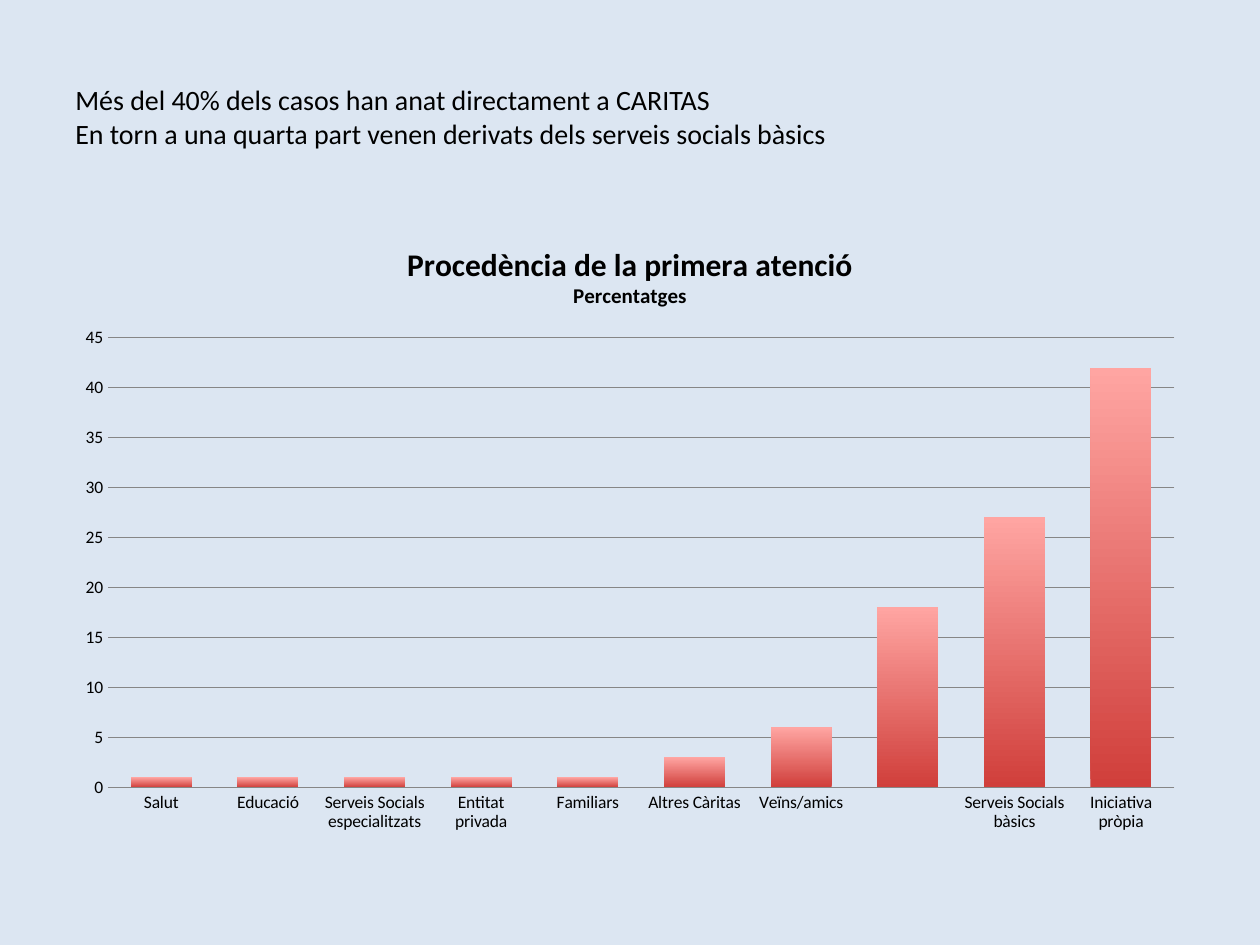
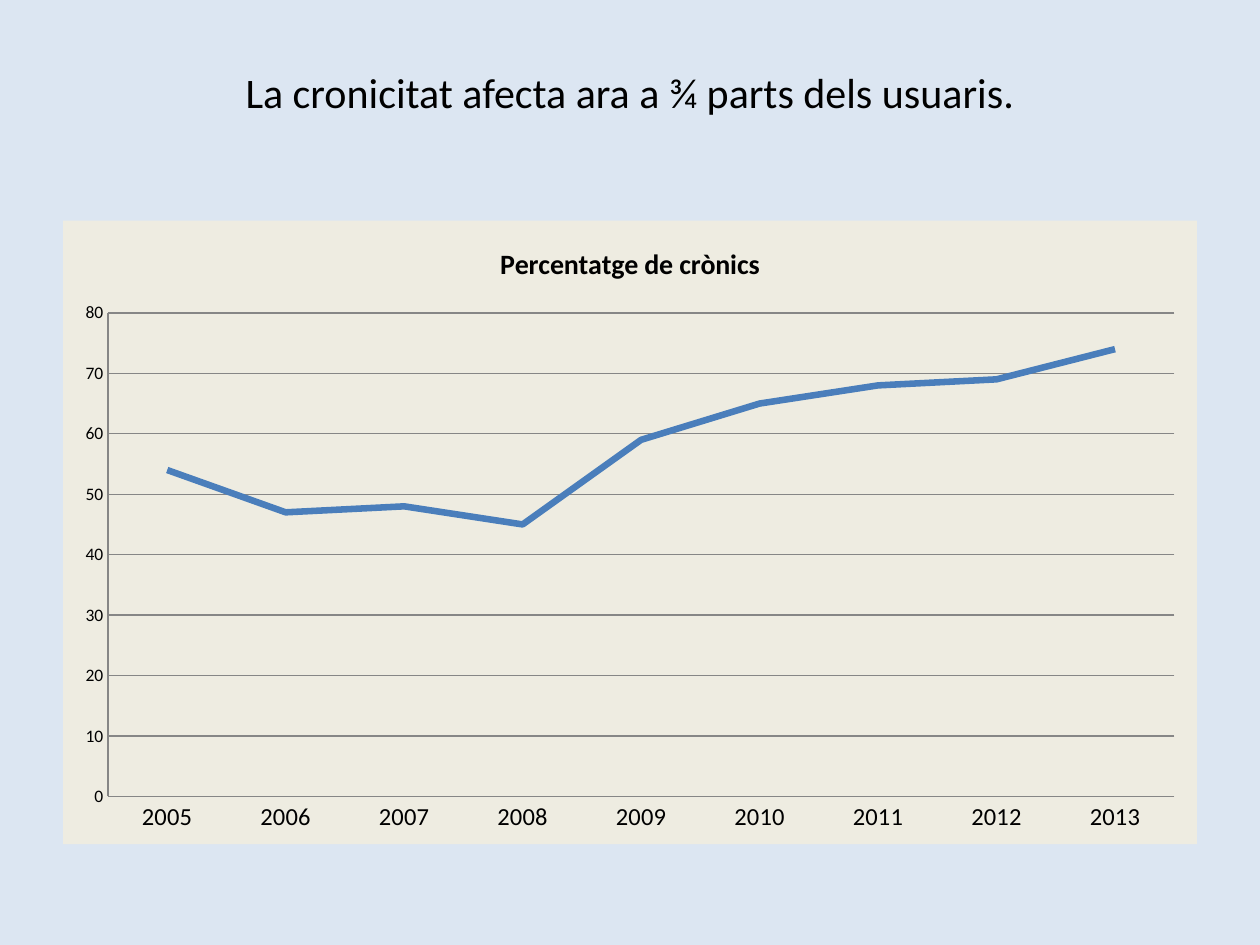
from lxml import etree
from pptx import Presentation
from pptx.chart.data import CategoryChartData
from pptx.dml.color import RGBColor
from pptx.enum.chart import XL_CHART_TYPE, XL_TICK_MARK
from pptx.enum.text import MSO_ANCHOR, PP_ALIGN
from pptx.oxml import parse_xml
from pptx.oxml.ns import nsdecls, qn
from pptx.util import Pt

STACKED = XL_CHART_TYPE.COLUMN_STACKED
LINE = XL_CHART_TYPE.LINE
NO_TICK = XL_TICK_MARK.NONE
MIDDLE = MSO_ANCHOR.MIDDLE
LEFT, CENTER = PP_ALIGN.LEFT, PP_ALIGN.CENTER

FONT = "Calibri"
BLACK = RGBColor(0x00, 0x00, 0x00)
PALE_BLUE = RGBColor(0xDC, 0xE6, 0xF2)
CREAM = RGBColor(0xEE, 0xEC, 0xE1)
GREY = RGBColor(0x86, 0x86, 0x86)
BAR_DARK = RGBColor(0xD0, 0x3F, 0x3B)
BAR_LIGHT = RGBColor(0xFF, 0xA5, 0xA2)
LINE_BLUE = RGBColor(0x4A, 0x7E, 0xBB)

MARGIN, CONTENT_W = 36, 648
TITLE_TOP = 21.6
CHART_TOP, CHART_H = 126, 356.4

ORIGINS = {
    "Salut": 1,
    "Educació": 1,
    "Serveis Socials especialitzats": 1,
    "Entitat privada": 1,
    "Familiars": 1,
    "Altres Càritas": 3,
    "Veïns/amics": 6,
    " ": 18,
    "Serveis Socials bàsics": 27,
    "Iniciativa pròpia": 42,
}
CHRONIC = {
    "2005": 54, "2006": 47, "2007": 48, "2008": 45, "2009": 59,
    "2010": 65, "2011": 68, "2012": 69, "2013": 74,
}


def add_slide(prs):
    s = prs.slides.add_slide(prs.slide_layouts[6])
    s.background.fill.solid()
    s.background.fill.fore_color.rgb = PALE_BLUE
    return s


def write(p, text, size, bold=False, align=None):
    p.font.size = Pt(size)
    r = p.add_run()
    r.text = text
    r.font.name = FONT
    r.font.size = Pt(size)
    r.font.bold = bold
    r.font.color.rgb = BLACK
    if align is not None:
        p.alignment = align


def write_lines(tf, lines, **fmt):
    """Write (text, size) pairs, one paragraph each."""
    for i, (text, size) in enumerate(lines):
        p = tf.add_paragraph() if i else tf.paragraphs[0]
        write(p, text, size, **fmt)


def add_title(s, lines, height, align):
    tf = s.shapes.add_textbox(Pt(MARGIN), Pt(TITLE_TOP),
                              Pt(CONTENT_W), Pt(height)).text_frame
    tf.word_wrap = True
    tf.vertical_anchor = MIDDLE
    write_lines(tf, lines, align=align)


def style_axis_line(line):
    line.color.rgb = GREY
    line.width = Pt(0.75)


def add_chart(s, kind, values, title_lines):
    data = CategoryChartData()
    data.categories = list(values)
    data.add_series("Series 1", list(values.values()))
    chart = s.shapes.add_chart(kind, Pt(MARGIN), Pt(CHART_TOP),
                               Pt(CONTENT_W), Pt(CHART_H), data).chart
    chart.font.name = FONT
    chart.font.size = Pt(10)
    chart.font.color.rgb = BLACK
    chart.has_legend = False
    chart.has_title = True
    write_lines(chart.chart_title.text_frame, title_lines, bold=True)
    for axis in (chart.category_axis, chart.value_axis):
        axis.major_tick_mark = axis.minor_tick_mark = NO_TICK
        style_axis_line(axis.format.line)
    chart.value_axis.has_major_gridlines = True
    style_axis_line(chart.value_axis.major_gridlines.format.line)
    chart.plots[0].vary_by_categories = False
    return chart


def fill_chart_area(chart, color):
    sp_pr = parse_xml(f"<c:spPr {nsdecls('c', 'a')}/>")
    fill = etree.SubElement(sp_pr, qn("a:solidFill"))
    etree.SubElement(fill, qn("a:srgbClr"), val=str(color))
    line = etree.SubElement(sp_pr, qn("a:ln"))
    etree.SubElement(line, qn("a:noFill"))
    chart._chartSpace.find(qn("c:txPr")).addprevious(sp_pr)


def add_origin_slide(prs):
    s = add_slide(prs)
    add_title(s, [
        ("Més del 40% dels casos han anat directament a CARITAS", 16),
        ("En torn a una quarta part venen derivats dels serveis socials bàsics", 16),
    ], 90, LEFT)
    chart = add_chart(s, STACKED, ORIGINS, [
        ("Procedència de la primera atenció", 18), ("Percentatges", 12)])
    chart.value_axis.format.line.fill.background()
    plot = chart.plots[0]
    plot.gap_width = 75
    plot.overlap = 100
    fill = plot.series[0].format.fill
    fill.gradient()
    fill.gradient_angle = 90
    for stop, color in zip(fill.gradient_stops, (BAR_DARK, BAR_LIGHT)):
        stop.color.rgb = color


def add_chronic_slide(prs):
    s = add_slide(prs)
    add_title(s, [("La cronicitat afecta ara a ¾ parts dels usuaris.", 24)],
              61.2, CENTER)
    chart = add_chart(s, LINE, CHRONIC, [("Percentatge de crònics", 16)])
    chart.category_axis.tick_labels.font.size = Pt(14)
    fill_chart_area(chart, CREAM)
    series = chart.plots[0].series[0]
    series.smooth = False
    series.format.line.color.rgb = LINE_BLUE
    series.format.line.width = Pt(3.75)


def main():
    prs = Presentation()
    prs.slide_width, prs.slide_height = Pt(720), Pt(540)
    add_origin_slide(prs)
    add_chronic_slide(prs)
    prs.save("out.pptx")


if __name__ == "__main__":
    main()
